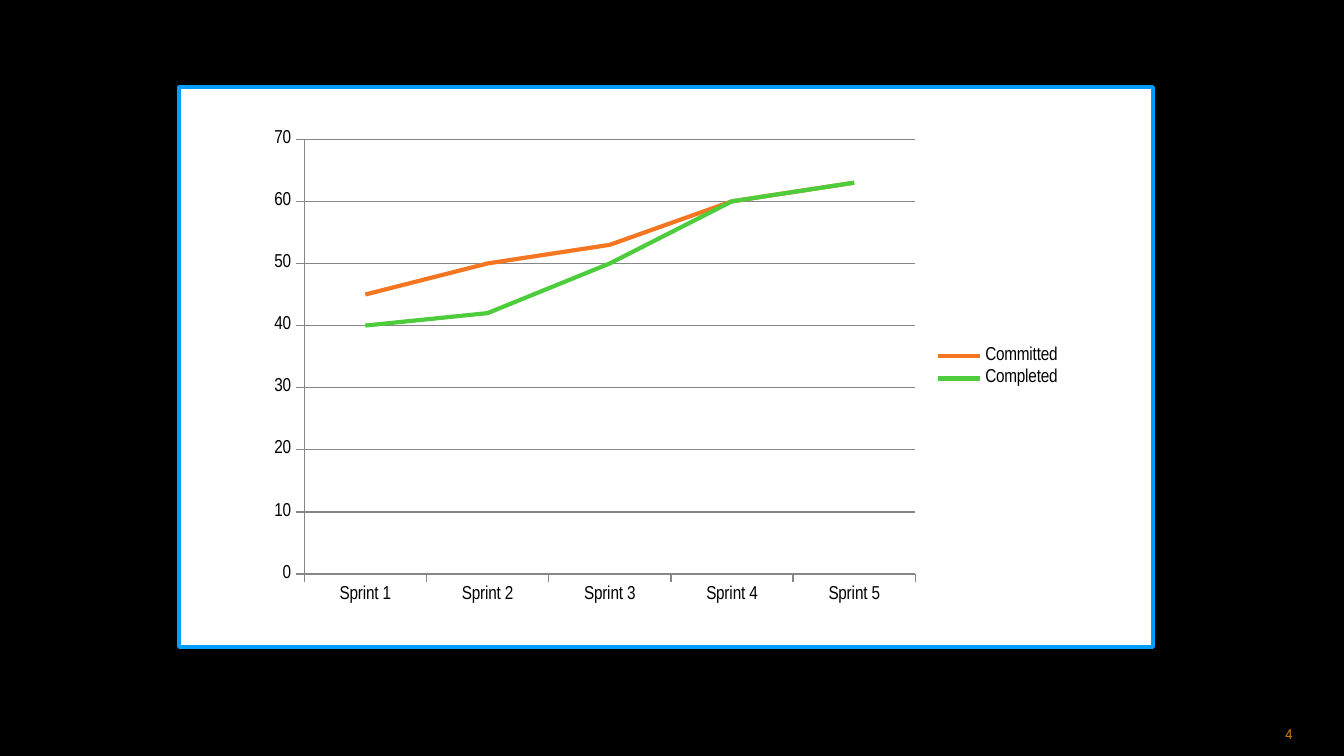
"""Build a slide with a line chart of committed and completed work per sprint."""
import pptx
import pptx.chart.data
import pptx.dml.color
import pptx.enum.chart
import pptx.enum.shapes
import pptx.enum.text
import pptx.util

SPRINTS = [f"Sprint {n}" for n in range(1, 6)]
SERIES = [
    ("Committed", (45, 50, 53, 60, 63), "F47621"),
    ("Completed", (40, 42, 50, 60, 63), "4DCC3C"),
]
PAGE_NUMBER = "4"

THEME = {
    "background": "000000",
    "panel": "FFFFFF",
    "border": "019EFF",
    "text": "000000",
    "axis": "868686",
    "page": "CA7805",
    "chart_font": "Arial Narrow",
    "page_font": "League Spartan",
    "chart_size": 10,
    "page_size": 8,
    "border_width": 2,
    "axis_width": 0.75,
    "series_width": 2.25,
}

SLIDE = (1344, 756)
PANEL = (179, 87, 974, 560)
CHART = (258, 121, 817, 493)
PAGE_BOX = (1254, 724, 70, 20)
EMU_PER_PX = 9144000 / SLIDE[0]


def px(*lengths):
    return [pptx.util.Emu(round(n * EMU_PER_PX)) for n in lengths]


def color(name):
    return pptx.dml.color.RGBColor.from_string(THEME.get(name, name))


def set_font(font, name, size, fill):
    font.name = THEME[name]
    font.size = pptx.util.Pt(THEME[size])
    font.color.rgb = color(fill)


def set_line(line, fill, width):
    line.color.rgb = color(fill)
    line.width = pptx.util.Pt(THEME[width])


def add_panel(s):
    sp = s.shapes.add_shape(pptx.enum.shapes.MSO_SHAPE.RECTANGLE, *px(*PANEL))
    sp.shadow.inherit = False
    sp.fill.solid()
    sp.fill.fore_color.rgb = color("panel")
    set_line(sp.line, "border", "border_width")


def add_sprint_chart(s):
    data = pptx.chart.data.CategoryChartData()
    data.categories = SPRINTS
    for name, values, _ in SERIES:
        data.add_series(name, values)
    kind = pptx.enum.chart.XL_CHART_TYPE.LINE
    chart = s.shapes.add_chart(kind, *px(*CHART), data).chart
    set_font(chart.font, "chart_font", "chart_size", "text")
    chart.has_title = False
    chart.has_legend = True
    chart.legend.position = pptx.enum.chart.XL_LEGEND_POSITION.RIGHT
    chart.legend.include_in_layout = False
    chart.plots[0].vary_by_categories = False

    for axis in (chart.category_axis, chart.value_axis):
        axis.major_tick_mark = pptx.enum.chart.XL_TICK_MARK.OUTSIDE
        axis.minor_tick_mark = pptx.enum.chart.XL_TICK_MARK.NONE
        set_line(axis.format.line, "axis", "axis_width")
    chart.value_axis.minimum_scale = 0
    chart.value_axis.maximum_scale = 70
    chart.value_axis.major_unit = 10
    chart.value_axis.has_major_gridlines = True
    set_line(chart.value_axis.major_gridlines.format.line, "axis", "axis_width")

    for series, (_, _, fill) in zip(chart.plots[0].series, SERIES):
        series.smooth = False
        series.marker.style = pptx.enum.chart.XL_MARKER_STYLE.NONE
        set_line(series.format.line, fill, "series_width")


def add_page_number(s):
    tf = s.shapes.add_textbox(*px(*PAGE_BOX)).text_frame
    tf.word_wrap = True
    tf.margin_left = tf.margin_right = tf.margin_top = tf.margin_bottom = 0
    tf.vertical_anchor = pptx.enum.text.MSO_ANCHOR.MIDDLE
    p = tf.paragraphs[0]
    p.alignment = pptx.enum.text.PP_ALIGN.CENTER
    r = p.add_run()
    r.text = PAGE_NUMBER
    set_font(r.font, "page_font", "page_size", "page")


def main():
    prs = pptx.Presentation()
    prs.slide_width, prs.slide_height = px(*SLIDE)
    s = prs.slides.add_slide(prs.slide_layouts[6])
    s.background.fill.solid()
    s.background.fill.fore_color.rgb = color("background")
    add_page_number(s)
    add_panel(s)
    add_sprint_chart(s)
    prs.save("out.pptx")


if __name__ == "__main__":
    main()
